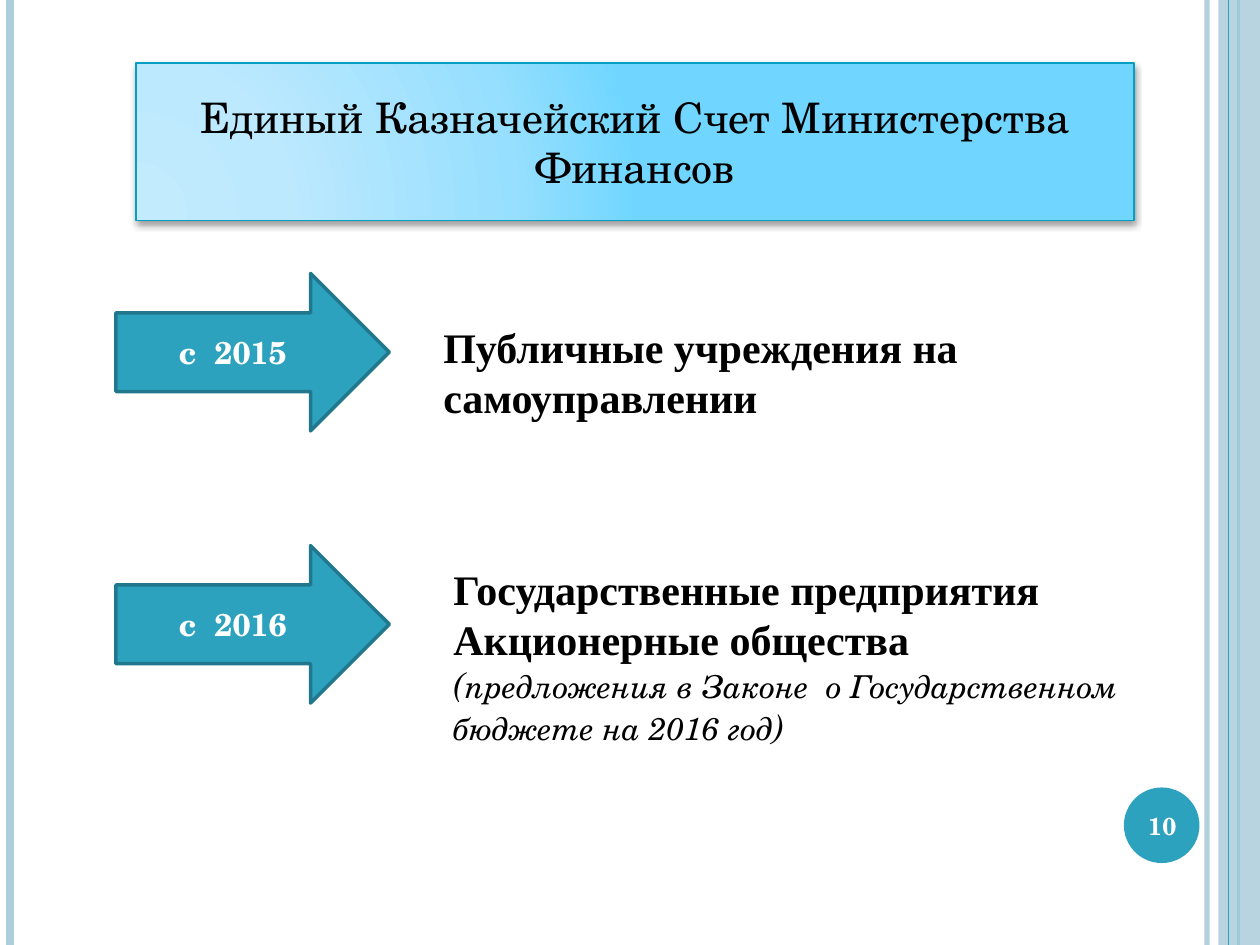
import pptx
import pptx.util
import pptx.dml.color
import pptx.enum.shapes
import pptx.enum.text
import pptx.oxml
import pptx.oxml.ns
from lxml import etree

Inches, Pt = pptx.util.Inches, pptx.util.Pt
SHAPE = pptx.enum.shapes.MSO_SHAPE
ALIGN = pptx.enum.text.PP_ALIGN
MIDDLE = pptx.enum.text.MSO_ANCHOR.MIDDLE
FIT = pptx.enum.text.MSO_AUTO_SIZE
qn = pptx.oxml.ns.qn

# Content
TITLE = "Единый Казначейский Счет Министерства Финансов"
PAGE = "10"
SERIF, BOOK = "Times New Roman", "TeX Gyre Schola"
HEAD = dict(size=24, font=SERIF, bold=True)
# Each paragraph is a list of (text, format) pieces
STAGES = [
    ("с  2015", (3.42, 2.5, 6.08, 0.91),
     [[("Публичные учреждения на самоуправлении", HEAD)]]),
    ("с  2016", (3.5, 4.42, 5.92, 1.58),
     [[("Государственные предприятия\vАкционерные общества", HEAD)],
      [("(", dict(size=20, italic=True)),
       ("предложения в Законе  о Государственном бюджете на 2016 год",
        dict(size=18, italic=True)),
       (")", dict(size=20, italic=True))]]),
]

COLORS = dict(teal="2DA2BF", edge="21788D", pale="ADCEDC", banner_edge="079EC3",
              white="FFFFFF", black="000000")
BANNER_STOPS = [(0, "C2EBFD"), (30, "BCE9FE"), (75, "96DFFE"), (100, "70D6FF")]
# Vertical rules: x, colour, width in points, opacity in percent
RULES = [(9.58, "pale", 3, 93), (0.08, "pale", 4.5, 100),
         (9.83, "teal", 1.5, 100), (9.75, "teal", 0.75, 100)]
WIDTH, HEIGHT = 10, 7.5
FIRST_ARROW, ARROW_STEP = 2.17, 2.16


def rgb(name):
    return pptx.dml.color.RGBColor.from_string(COLORS[name])


def box(*lengths):
    return [Inches(length) for length in lengths]


def set_opacity(element, percent):
    color = next(element.iter(qn("a:srgbClr")))
    etree.SubElement(color, qn("a:alpha")).set("val", str(percent * 1000))


def style(run, size, font=BOOK, color="black", bold=False, italic=False):
    run.font.size, run.font.name = Pt(size), font
    run.font.bold, run.font.italic = bold, italic
    run.font.color.rgb = rgb(color)


def add_filled(kind, place, fill, edge=None):
    shape = slide.shapes.add_shape(kind, *box(*place))
    shape.shadow.inherit = False
    shape.fill.solid()
    shape.fill.fore_color.rgb = rgb(fill)
    if edge:
        shape.line.color.rgb = rgb(edge)
        shape.line.width = Pt(2)
    else:
        shape.line.fill.background()
    return shape


def write_centred(shape, text, **look):
    frame = shape.text_frame
    frame.text = text
    frame.word_wrap, frame.vertical_anchor = True, MIDDLE
    frame.auto_size = FIT.NONE
    frame.paragraphs[0].alignment = ALIGN.CENTER
    for run in frame.paragraphs[0].runs:
        style(run, **look)


def write_pieces(frame, paragraphs):
    for index, pieces in enumerate(paragraphs):
        paragraph = frame.add_paragraph() if index else frame.paragraphs[0]
        if len(pieces) == 1:
            paragraph.text = pieces[0][0]
            for run in paragraph.runs:
                style(run, **pieces[0][1])
            continue
        for text, look in pieces:
            run = paragraph.add_run()
            run.text = text
            style(run, **look)


def banner_look(title):
    """Give the title a rounded outline, a radial gradient and a soft shadow."""
    stops = "".join(f'<a:gs pos="{at * 1000}"><a:srgbClr val="{color}"/></a:gs>'
                    for at, color in BANNER_STOPS)
    look = pptx.oxml.parse_xml(f"""
<a:look xmlns:a="http://schemas.openxmlformats.org/drawingml/2006/main">
  <a:prstGeom prst="roundRect"><a:avLst/></a:prstGeom>
  <a:gradFill rotWithShape="1"><a:gsLst>{stops}</a:gsLst>
    <a:path path="circle">
      <a:fillToRect l="5000" t="100000" r="120000" b="10000"/>
    </a:path></a:gradFill>
  <a:ln w="{Pt(1)}"><a:solidFill>
    <a:srgbClr val="{COLORS['banner_edge']}"/></a:solidFill></a:ln>
  <a:effectLst>
    <a:outerShdw blurRad="{Pt(4)}" dist="{Pt(2)}" dir="5400000" rotWithShape="0">
      <a:srgbClr val="{COLORS['black']}"><a:alpha val="40000"/></a:srgbClr>
    </a:outerShdw></a:effectLst>
</a:look>""")
    for part in list(look):
        title._element.spPr.append(part)


deck = pptx.Presentation()
deck.slide_width, deck.slide_height = Inches(WIDTH), Inches(HEIGHT)
slide = deck.slides.add_slide(deck.slide_layouts[5])

# Side rules and right band
for x, color, weight, opacity in RULES:
    rule = slide.shapes.add_connector(
        pptx.enum.shapes.MSO_CONNECTOR.STRAIGHT, *box(x, 0, x, HEIGHT))
    rule.line.color.rgb = rgb(color)
    rule.line.width = Pt(weight)
    if opacity < 100:
        set_opacity(rule._element.spPr, opacity)
    etree.SubElement(rule._element.spPr, qn("a:effectLst"))
    if color == "teal" and weight == 1.5:
        band = add_filled(SHAPE.RECTANGLE, (9.67, 0, 0.33, HEIGHT), "pale")
        set_opacity(band._element.spPr, 87)

# Page number badge
add_filled(SHAPE.OVAL, (8.92, 6.25, 0.6, 0.6), "teal")
page = slide.shapes.add_textbox(*box(8.89, 6.27, 0.67, 0.57))
write_centred(page, PAGE, size=14, color="white", bold=True)

# Title banner
title = slide.shapes.title
title.left, title.top, title.width, title.height = box(1.08, 0.5, 7.92, 1.25)
banner_look(title)
write_centred(title, TITLE, size=24)

# Stages: year arrow and who joins
for row, (year, place, paragraphs) in enumerate(STAGES):
    arrow = add_filled(SHAPE.RIGHT_ARROW,
                       (0.92, FIRST_ARROW + row * ARROW_STEP, 2.17, 1.25),
                       "teal", "edge")
    write_centred(arrow, year, size=18, color="white", bold=True)
    members = slide.shapes.add_textbox(*box(*place))
    members.text_frame.word_wrap = True
    members.text_frame.auto_size = FIT.SHAPE_TO_FIT_TEXT
    write_pieces(members.text_frame, paragraphs)

deck.save("out.pptx")
